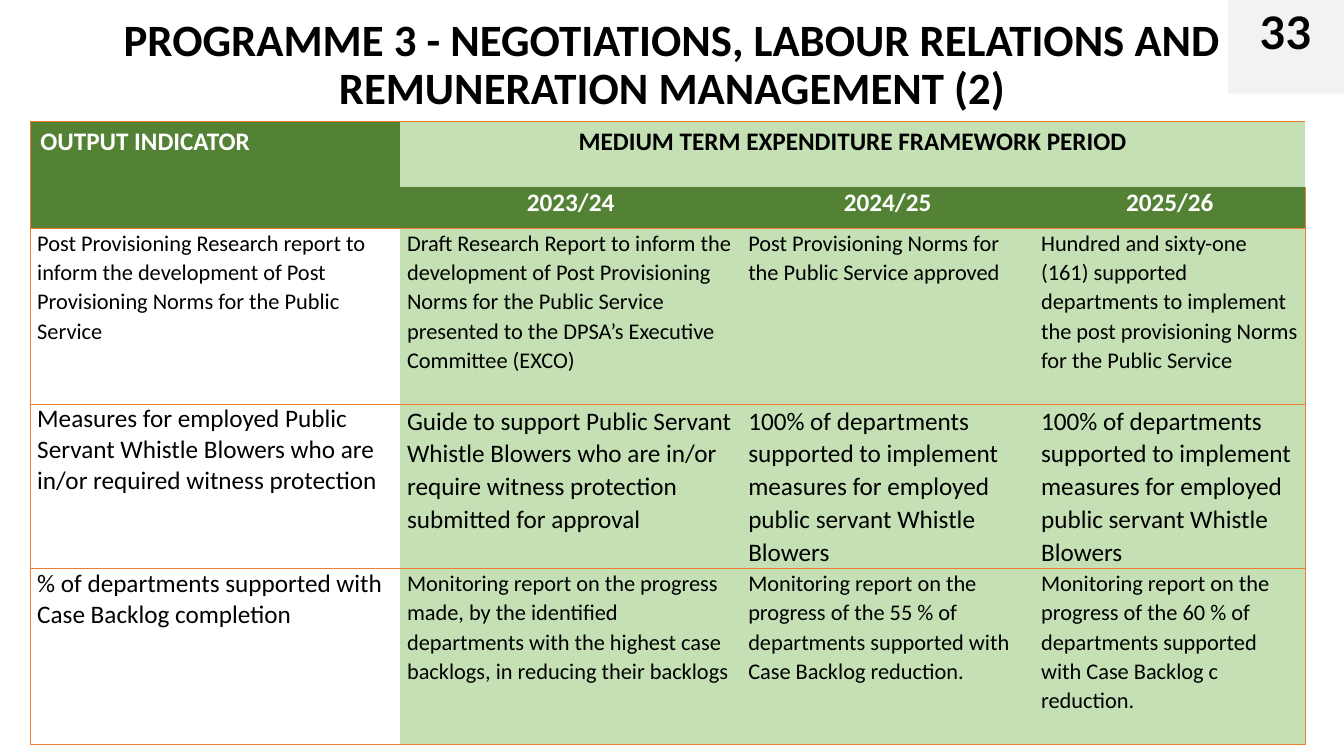
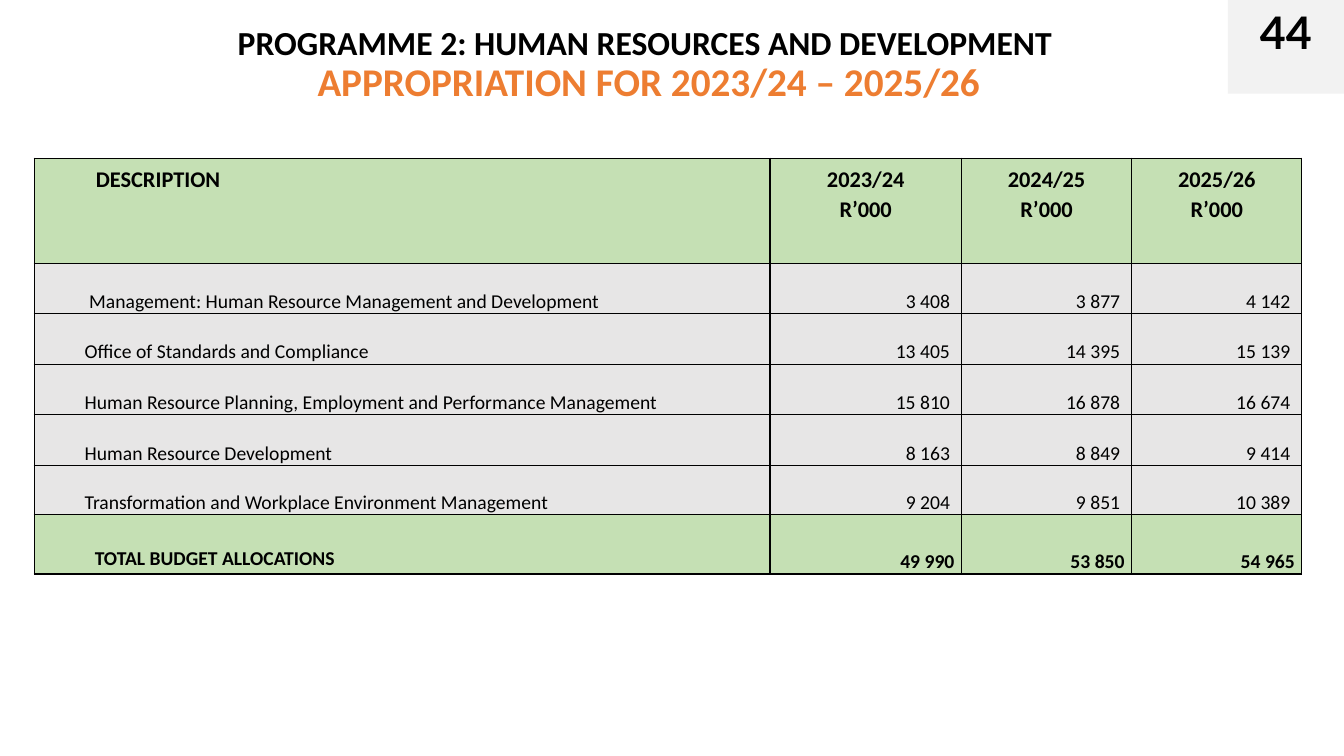
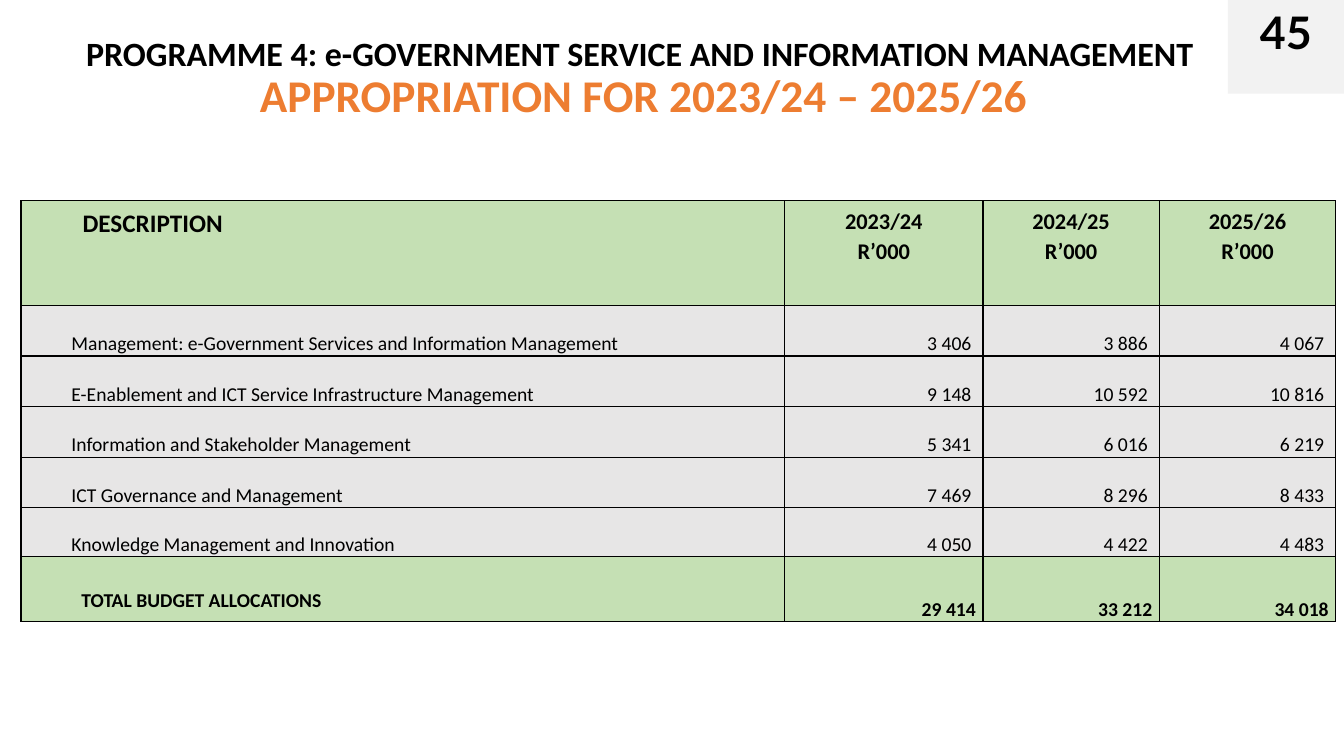
from itertools import accumulate
from lxml import etree
from pptx import Presentation
from pptx.dml import color as colors
from pptx.enum import shapes, text
from pptx.oxml import ns
from pptx.util import Pt

BLACK, WHITE, ORANGE = "000000", "FFFFFF", "ED7D31"
GREEN, PALE_GREEN, GREY, BADGE_GREY = "548235", "C5E0B4", "E7E6E6", "F2F2F2"
LEFT, CENTER, RIGHT = text.PP_ALIGN.LEFT, text.PP_ALIGN.CENTER, text.PP_ALIGN.RIGHT
TOP, MIDDLE, BOTTOM = text.MSO_ANCHOR.TOP, text.MSO_ANCHOR.MIDDLE, text.MSO_ANCHOR.BOTTOM
NO_GRID_STYLE = "{2D5ABB26-0587-4C30-8999-92F81FD0307C}"
WIDE_INSETS = (7.2, 3.6, 7.2, 3.6)
TIGHT_INSETS = (5, 0, 5, 0)


def rgb(value):
    return colors.RGBColor.from_string(value)


def add_text(paragraph, words, size=16, color=BLACK, bold=False, font="Calibri",
             align=LEFT, spacing=1.0):
    paragraph.alignment = align
    paragraph.line_spacing = spacing
    run = paragraph.add_run()
    run.text = words
    run.font.name = font
    run.font.size = Pt(size)
    run.font.bold = bold
    run.font.color.rgb = rgb(color)


def set_insets(target, insets):
    target.margin_left, target.margin_top, target.margin_right, target.margin_bottom = map(Pt, insets)


def set_borders(cell, sides, color, width):
    properties = cell._tc.get_or_add_tcPr()
    for side in "LRTB":
        if side in sides:
            line = etree.SubElement(properties, ns.qn(f"a:ln{side}"), w=str(Pt(width)))
            fill = etree.SubElement(line, ns.qn("a:solidFill"))
            etree.SubElement(fill, ns.qn("a:srgbClr"), val=color)


def fill_cell(cell, lines, fill=None, insets=TIGHT_INSETS, anchor=TOP, **style):
    set_insets(cell, insets)
    cell.vertical_anchor = anchor
    if fill:
        cell.fill.solid()
        cell.fill.fore_color.rgb = rgb(fill)
    for index, words in enumerate(lines):
        frame = cell.text_frame
        paragraph = frame.add_paragraph() if index else frame.paragraphs[0]
        add_text(paragraph, words, **style)


def add_grid(slide, left, top, widths, heights):
    frame = slide.shapes.add_table(len(heights), len(widths), Pt(left), Pt(top),
                                   Pt(sum(widths)), Pt(sum(heights)))
    table = frame.table
    table.first_row = table.horz_banding = False
    table._tbl.tblPr.find(ns.qn("a:tableStyleId")).text = NO_GRID_STYLE
    for column, width in zip(table.columns, widths):
        column.width = Pt(width)
    for row, height in zip(table.rows, heights):
        row.height = Pt(height)
    return table


def add_title(slide, box, lines, insets=WIDE_INSETS):
    title = slide.shapes.title
    title.left, title.top, title.width, title.height = map(Pt, box)
    frame = title.text_frame
    frame.word_wrap = True
    frame.auto_size = text.MSO_AUTO_SIZE.NONE
    frame.vertical_anchor = MIDDLE
    set_insets(frame, insets)
    paragraph = frame.paragraphs[0]
    for index, (words, size, color) in enumerate(lines):
        if index:
            paragraph.add_line_break()
        add_text(paragraph, words, size=size, color=color, bold=True, align=CENTER, spacing=0.9)


def add_badge(slide, number):
    badge = slide.shapes.add_shape(shapes.MSO_SHAPE.RECTANGLE, Pt(877), 0, Pt(83), Pt(67))
    badge.shadow.inherit = False
    badge.fill.solid()
    badge.fill.fore_color.rgb = rgb(BADGE_GREY)
    badge.line.fill.background()
    badge.text_frame.vertical_anchor = TOP
    add_text(badge.text_frame.paragraphs[0], number, size=32, bold=True, font="Lato", align=CENTER)


def add_slide(presentation, number, **title):
    slide = presentation.slides.add_slide(presentation.slide_layouts[5])
    add_title(slide, **title)
    add_badge(slide, number)
    return slide


def add_indicator_table(slide, left, top, widths, heights, years, body):
    table = add_grid(slide, left, top, widths, heights)
    last_column = len(widths) - 1
    for row in range(len(heights)):
        for column in range(len(widths)):
            sides = "T" if row == 0 else "TB" if row > 1 else ""
            sides += "L" if column == 0 else "R" if column == last_column else ""
            set_borders(table.cell(row, column), sides, ORANGE, 0.5)
    table.cell(0, 0).merge(table.cell(1, 0))
    table.cell(0, 1).merge(table.cell(0, last_column))
    fill_cell(table.cell(0, 0), ["OUTPUT INDICATOR"], GREEN, WIDE_INSETS,
              size=18, color=WHITE, bold=True)
    fill_cell(table.cell(0, 1), ["MEDIUM TERM EXPENDITURE FRAMEWORK PERIOD"], PALE_GREEN,
              WIDE_INSETS, size=18, bold=True, align=CENTER)
    for column, year in enumerate(years, 1):
        fill_cell(table.cell(1, column), [year], GREEN,
                  size=18, color=WHITE, bold=True, align=CENTER)
    for row, (label_size, label_spacing, size, label, *targets) in enumerate(body, 2):
        fill_cell(table.cell(row, 0), [label], size=label_size, spacing=label_spacing)
        for column, target in enumerate(targets, 1):
            fill_cell(table.cell(row, column), [target], PALE_GREEN, size=size, spacing=1.07)


def add_budget_table(slide, left, top, widths, heights, years, items, totals, heading_size=16):
    table = add_grid(slide, left, top, widths, heights)
    for cell in table.iter_cells():
        set_borders(cell, "LRTB", BLACK, 1)
    fill_cell(table.cell(0, 0), ["DESCRIPTION"], PALE_GREEN, (44, 3.6, 8, 3.6),
              size=heading_size, bold=True, spacing=1.1)
    for column, year in enumerate(years, 1):
        fill_cell(table.cell(0, column), [year, "R’000"], PALE_GREEN, WIDE_INSETS,
                  bold=True, align=CENTER, spacing=1.1)
    for row, (label, *amounts) in enumerate(items, 1):
        fill_cell(table.cell(row, 0), [label], GREY, (36, 0, 0, 0), BOTTOM, size=14)
        for column, amount in enumerate(amounts, 1):
            fill_cell(table.cell(row, column), [amount], GREY, (5, 0, 8.2, 0), BOTTOM,
                      size=14, align=RIGHT, spacing=1.07)
    total_row = len(items) + 1
    fill_cell(table.cell(total_row, 0), ["TOTAL BUDGET ALLOCATIONS"], PALE_GREEN,
              (43.2, 21.4, 7.2, 0), size=14, bold=True, spacing=1.1)
    for column, total in enumerate(totals, 1):
        fill_cell(table.cell(total_row, column), [total], PALE_GREEN, TIGHT_INSETS, BOTTOM,
                  size=14, bold=True, align=RIGHT, spacing=1.07)


def main():
    presentation = Presentation()
    presentation.slide_width, presentation.slide_height = Pt(960), Pt(540)
    years = ["2023/24", "2024/25", "2025/26"]
    appropriation = "APPROPRIATION FOR 2023/24 – 2025/26"
    whistle_blowers = ("100% of departments supported to implement measures for employed "
                       "public servant Whistle Blowers")

    slide = add_slide(
        presentation, "33", box=(66.2, 12.2, 828, 70),
        lines=[("PROGRAMME 3 - NEGOTIATIONS, LABOUR RELATIONS AND REMUNERATION MANAGEMENT (2)",
                32, BLACK)])
    add_indicator_table(
        slide, 21.6, 86.6, [264.2, 243.7, 209.2, 193.7], [47, 29.2, 125.7, 117.2, 125.7], years,
        [(16, 1.07, 16,
          "Post Provisioning Research report to inform the development of Post Provisioning "
          "Norms for the Public Service",
          "Draft Research Report to inform the development of Post Provisioning Norms for the "
          "Public Service presented to the DPSA’s Executive Committee (EXCO)",
          "Post Provisioning Norms for the Public Service approved",
          "Hundred and sixty-one (161) supported departments to implement the post provisioning "
          "Norms for the Public Service"),
         (18, 1.0, 18,
          "Measures for employed Public Servant Whistle Blowers who are in/or required witness "
          "protection",
          "Guide to support Public Servant Whistle Blowers who are in/or require witness "
          "protection submitted for approval",
          whistle_blowers, whistle_blowers),
         (18, 1.0, 16,
          "% of departments supported with Case Backlog completion",
          "Monitoring report on the progress made, by the identified departments with the highest "
          "case backlogs, in reducing their backlogs",
          "Monitoring report on the progress of the 55 % of departments supported with Case "
          "Backlog reduction.",
          "Monitoring report on the progress of the 60 % of departments supported with Case "
          "Backlog c reduction.")])

    slide = add_slide(
        presentation, "44", box=(32.4, 10.8, 862, 72),
        lines=[("PROGRAMME 2: HUMAN RESOURCES AND DEVELOPMENT ", 24, BLACK),
               (appropriation, 28, ORANGE)])
    add_budget_table(
        slide, 24.5, 113, [525.5, 136.8, 121.6, 121.6], [75] + [36.1] * 4 + [35.4, 42.4], years,
        [(" Management: Human Resource Management and Development", "3 408", "3 877", "4 142"),
         ("Office of Standards and Compliance", "13 405", "14 395", "15 139"),
         ("Human Resource Planning, Employment and Performance Management",
          "15 810", "16 878", "16 674"),
         ("Human Resource Development", "8 163", "8 849", "9 414"),
         ("Transformation and Workplace Environment Management", "9 204", "9 851", "10 389")],
        ["49 990", "53 850", "54 965"])

    slide = add_slide(
        presentation, "45", box=(-12.2, 10.8, 944, 72), insets=(7.2, 24, 7.2, 3.6),
        lines=[("PROGRAMME 4: e-GOVERNMENT SERVICE AND INFORMATION MANAGEMENT ", 24.3, BLACK),
               (appropriation, 32.4, ORANGE)])
    add_budget_table(
        slide, 15, 143.3, [545.5, 141.6, 126, 126], [75] + [36.1] * 4 + [35.2, 46.2], years,
        [("Management: e-Government Services and Information Management",
          "3 406", "3 886", "4 067"),
         ("E-Enablement and ICT Service Infrastructure Management", "9 148", "10 592", "10 816"),
         ("Information and Stakeholder Management", "5 341", "6 016", "6 219"),
         ("ICT Governance and Management", "7 469", "8 296", "8 433"),
         ("Knowledge Management and Innovation", "4 050", "4 422", "4 483")],
        ["29 414", "33 212", "34 018"], heading_size=18)

    presentation.save("out.pptx")


if __name__ == "__main__":
    main()
